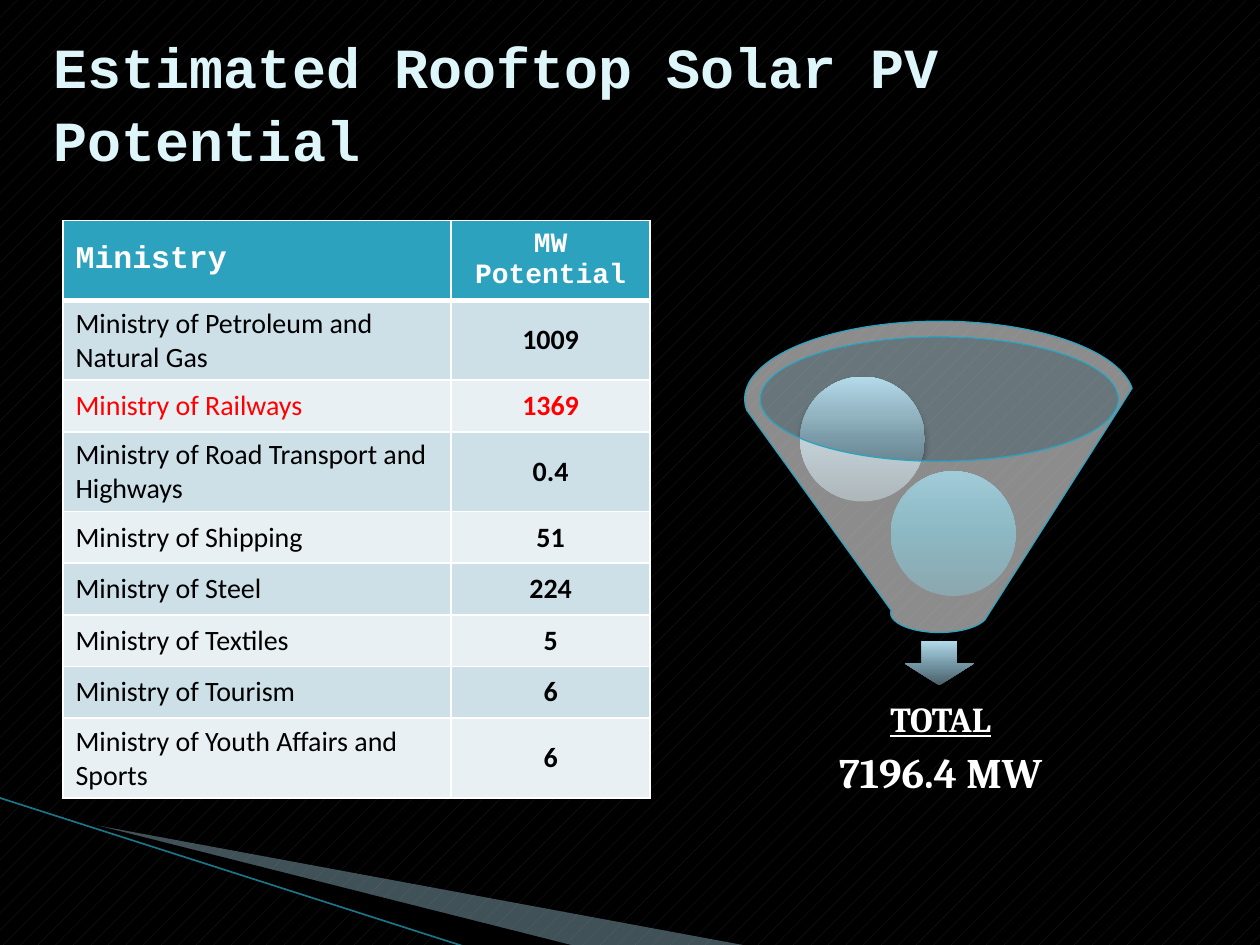
from lxml import etree
from pptx import Presentation
from pptx import util as u
from pptx.dml.color import RGBColor
from pptx.enum import dml, shapes, text
from pptx.oxml import parse_xml
from pptx.oxml.ns import qn

BLACK = RGBColor(0, 0, 0)
WHITE = RGBColor(255, 255, 255)
RED = RGBColor(255, 0, 0)
DOT = RGBColor(0x23, 0x23, 0x23)
ICE = RGBColor(0xDE, 0xF5, 0xFA)
TEAL = RGBColor(0x2D, 0xA2, 0xBF)
DEEP = RGBColor(0x1B, 0x75, 0x87)
WEDGE = RGBColor(0xA0, 0xCB, 0xDC)
MIST = RGBColor(0xBE, 0xD7, 0xE2)
BANDS = RGBColor(0xCD, 0xE0, 0xE8), RGBColor(0xE8, 0xF0, 0xF4)
NS = 'xmlns:a="http://schemas.openxmlformats.org/drawingml/2006/main"'


def write(par, words, tone, **form):
    run = par.add_run()
    run.text = words
    run.font.color.rgb = tone
    for key, val in form.items():
        setattr(run.font, key, val)


def paint(shape, tone, alpha=100):
    shape.shadow.inherit = False
    shape.line.fill.background()
    shape.fill.solid()
    shape.fill.fore_color.rgb = tone
    if alpha < 100:
        clr = shape._element.spPr.find(qn("a:solidFill"))[0]
        etree.SubElement(clr, qn("a:alpha")).set("val", str(alpha * 1000))


deck = Presentation()
deck.slide_width, deck.slide_height = u.Inches(10), u.Inches(7.5)
slide = deck.slides.add_slide(deck.slide_layouts[6])
back = slide.background.fill
back.patterned()
back.pattern = dml.MSO_PATTERN.PERCENT_5
back.fore_color.rgb = DOT
back.back_color.rgb = BLACK
pool = slide.shapes

wedges = [
    ([(0.55, 6.51), (5.95, 7.51), (4.56, 7.51), (0.55, 6.5)], WEDGE, 40),
    ([(0.53, 6.49), (4.57, 7.51), (3.72, 7.52), (0.54, 6.5)], BLACK, 100),
]
for spots, tone, alpha in wedges:
    pts = [(u.Inches(x), u.Inches(y)) for x, y in spots]
    pen = pool.build_freeform(*pts[0])
    pen.add_line_segments(pts[1:])
    paint(pen.convert_to_shape(), tone, alpha)

edge = pool.add_connector(
    shapes.MSO_CONNECTOR.STRAIGHT,
    u.Inches(-0.01), u.Inches(6.33), u.Inches(3.71), u.Inches(7.52))
edge.line.color.rgb = DEEP
edge.line.width = u.Pt(0.95)
etree.SubElement(edge._element.spPr, qn("a:effectLst"))

title = pool.add_textbox(u.Inches(0.33), u.Inches(0.17), u.Inches(9), u.Inches(1.25))
frame = title.text_frame
frame.word_wrap = True
frame.vertical_anchor = text.MSO_ANCHOR.MIDDLE
frame.paragraphs[0].line_spacing = 1.07
write(frame.paragraphs[0], "Estimated Rooftop Solar PV Potential", ICE,
      size=u.Pt(32.4), name="Courier New", bold=True)

rows = [
    ("Ministry", "MW Potential"),
    ("Ministry of Petroleum and Natural Gas", "1009"),
    ("Ministry of Railways", "1369"),
    ("Ministry of Road Transport and Highways", "0.4"),
    ("Ministry of Shipping", "51"),
    ("Ministry of Steel", "224"),
    ("Ministry of Textiles", "5"),
    ("Ministry of Tourism", "6"),
    ("Ministry of Youth Affairs and Sports", "6"),
]
tall = 0, 1, 3, 8
grid = pool.add_table(len(rows), 2, u.Inches(0.5), u.Inches(1.75),
                      u.Inches(4.67), u.Inches(4.56)).table
for col, wide in zip(grid.columns, (3.08, 1.58)):
    col.width = u.Inches(wide)
for r, row in enumerate(rows):
    grid.rows[r].height = u.Inches(0.63 if r in tall else 0.41)
    for c, words in enumerate(row):
        cell = grid.cell(r, c)
        cell.vertical_anchor = text.MSO_ANCHOR.MIDDLE
        for side in "LRTB":
            thick = 3 if (r, side) in ((0, "B"), (1, "T")) else 1
            cell._tc.get_or_add_tcPr().append(parse_xml(
                f'<a:ln{side} {NS} w="{u.Pt(thick)}"><a:solidFill>'
                f'<a:srgbClr val="{WHITE}"/></a:solidFill></a:ln{side}>'))
        cell.fill.solid()
        cell.fill.fore_color.rgb = BANDS[(r - 1) % 2] if r else TEAL
        par = cell.text_frame.paragraphs[0]
        par.alignment = text.PP_ALIGN.CENTER if c else text.PP_ALIGN.LEFT
        tone = WHITE if r == 0 else RED if r == 2 else BLACK
        write(par, words, tone, size=u.Pt(16 if r or c else 18),
              name="Calibri" if r else "Courier New", bold=r == 0 or c == 1)

kind = shapes.MSO_SHAPE
pale = "4B6068", "7A9AA7", "93B4C1", "B4DAEA"
steel = "495F69", "7699A8", "8EB3C2", "B0D9EB"
sea = "003D4D", "00637B", "10728D", "328DAA"
parts = [
    (kind.OVAL, (6.03, 2.67, 2.85, 0.99), MIST, None),
    (kind.DOWN_ARROW, (7.18, 5.09, 0.55, 0.35), WHITE, steel),
    (kind.OVAL, (7.07, 3.74, 0.99, 0.99), WHITE, sea),
    (kind.OVAL, (6.35, 2.99, 0.99, 0.99), WHITE, pale),
    (kind.FUNNEL, (5.91, 2.55, 3.09, 2.47), WHITE, None),
]
for form, box, tone, ramp in parts:
    part = pool.add_shape(form, *map(u.Inches, box))
    paint(part, tone, 100 if ramp else 55)
    if ramp:
        stops = "".join(f'<a:gs pos="{pos}000"><a:srgbClr val="{hue}"/></a:gs>'
                        for pos, hue in zip((0, 50, 70, 100), ramp))
        prop = part._element.spPr
        prop.replace(prop.find(qn("a:solidFill")), parse_xml(
            f'<a:gradFill {NS}><a:gsLst>{stops}</a:gsLst>'
            '<a:lin ang="16200000" scaled="0"/></a:gradFill>'))
        prop.find(qn("a:effectLst")).append(parse_xml(
            f'<a:outerShdw {NS} blurRad="{u.Pt(4)}" dist="{u.Pt(3)}" dir="5400000">'
            f'<a:srgbClr val="{BLACK}"><a:alpha val="35000"/></a:srgbClr></a:outerShdw>'))
    if form == kind.FUNNEL:
        part.line.color.rgb = TEAL
        part.line.width = u.Pt(0.75)

total = pool.add_textbox(u.Inches(6.14), u.Inches(5.42), u.Inches(2.65), u.Inches(1.06))
frame = total.text_frame
frame.word_wrap = True
frame.vertical_anchor = text.MSO_ANCHOR.MIDDLE
for side in ("left", "top", "right", "bottom"):
    setattr(frame, f"margin_{side}", u.Inches(0.16))
for i, (words, size) in enumerate([("TOTAL", 20), ("7196.4 MW", 24)]):
    par = frame.add_paragraph() if i else frame.paragraphs[0]
    par.alignment = text.PP_ALIGN.CENTER
    par.line_spacing = 0.9
    par.space_after = u.Pt(7)
    write(par, words, WHITE, size=u.Pt(size), name="Cambria", bold=True, underline=i == 0)

deck.save("out.pptx")
